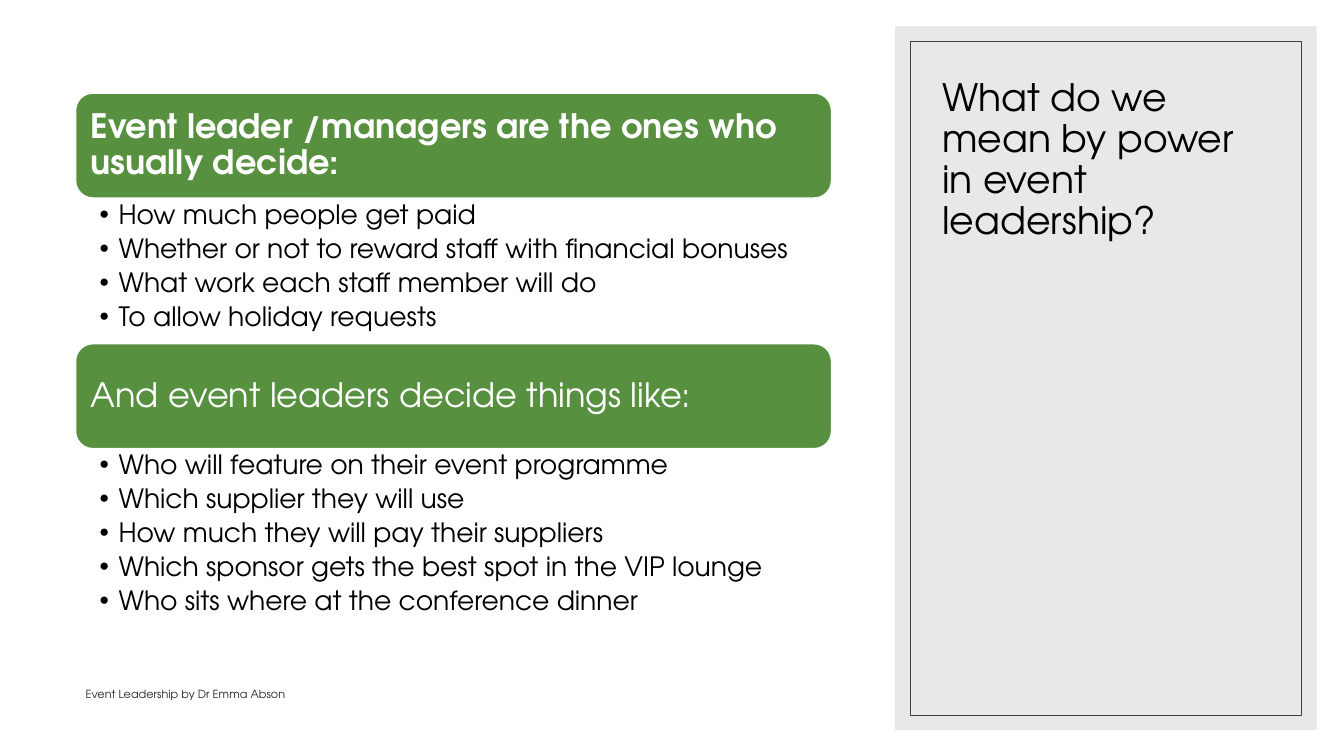
from pptx import Presentation
from pptx.dml.color import RGBColor
from pptx.enum.shapes import MSO_SHAPE as Shape
from pptx.enum.text import MSO_ANCHOR as Anchor, PP_ALIGN as Align
from pptx.oxml.ns import qn
from pptx.util import Pt
from lxml.etree import SubElement

FONT = "TeX Gyre Adventor"
COLOURS = {
    "panel": "D9D9D9",
    "frame": "404040",
    "green": "57903F",
    "white": "FFFFFF",
    "black": "000000",
    "footer": "262626",
}
BAR_HEIGHT = 75
LIST_INDENT = 13.5
SECTIONS = [
    (66.5, 104, True, "Event leader /managers are the ones who usually decide:", [
        "How much people get paid",
        "Whether or not to reward staff with financial bonuses",
        "What work each staff member will do",
        "To allow holiday requests",
    ]),
    (245.5, 129, False, "And event leaders decide things like:", [
        "Who will feature on their event programme",
        "Which supplier they will use",
        "How much they will pay their suppliers",
        "Which sponsor gets the best spot in the VIP lounge",
        "Who sits where at the conference dinner",
    ]),
]


def colour(name):
    return RGBColor.from_string(COLOURS[name])


def add_panel_shape(page, kind, box, fill=None, line=None, width=1):
    shape = page.shapes.add_shape(kind, *map(Pt, box))
    shape.shadow.inherit = False
    if fill:
        shape.fill.solid()
        shape.fill.fore_color.rgb = colour(fill)
    else:
        shape.fill.background()
    if line:
        shape.line.color.rgb = colour(line)
        shape.line.width = Pt(width)
    else:
        shape.line.fill.background()
    return shape


def write(shape, lines, size, ink, anchor, insets=(7.2, 3.6, 7.2, 3.6),
          spacing=0.9, after=0, bold=False, bullets=False):
    frame = shape.text_frame
    frame.word_wrap = True
    frame.vertical_anchor = anchor
    frame.margin_left, frame.margin_top, frame.margin_right, frame.margin_bottom = map(Pt, insets)
    frame.text = "\n".join(lines)
    for para in frame.paragraphs:
        para.alignment = Align.LEFT
        para.line_spacing = spacing
        para.space_after = Pt(after)
        if bullets:
            add_bullet(para)
        for run in para.runs:
            run.font.name = FONT
            run.font.size = Pt(size)
            run.font.bold = bold
            run.font.color.rgb = colour(ink)


def add_bullet(para):
    para.level = 1
    properties = para._p.get_or_add_pPr()
    properties.set("marL", str(Pt(LIST_INDENT)))
    properties.set("indent", str(-Pt(LIST_INDENT)))
    SubElement(properties, qn("a:buFont")).set("typeface", "Arial")
    SubElement(properties, qn("a:buChar")).set("char", "•")


def add_title_panel(page, left, top, width, height):
    panel = add_panel_shape(page, Shape.RECTANGLE, (left, top, width, height), "panel")
    tint = panel.fill._xPr.find(qn("a:solidFill"))[0]
    SubElement(tint, qn("a:alpha")).set("val", "60000")
    gap = 10.6
    frame_box = (left + gap, top + gap, width - 2 * gap, height - 2 * gap)
    add_panel_shape(page, Shape.RECTANGLE, frame_box, line="frame", width=0.5)
    title = page.shapes.add_textbox(Pt(left + 26.6), Pt(top + 28.6), Pt(249), Pt(129.6))
    write(title, ["What do we mean by power in event leadership?"], 27, "black", Anchor.BOTTOM)


def add_section(page, left, top, width, list_height, bold, heading, items):
    bar = add_panel_shape(page, Shape.ROUNDED_RECTANGLE, (left, top, width, BAR_HEIGHT),
                          "green", "white")
    write(bar, [heading], 24, "white", Anchor.MIDDLE, insets=(7.2,) * 4, bold=bold)
    item_box = page.shapes.add_textbox(Pt(left), Pt(top + BAR_HEIGHT), Pt(width), Pt(list_height))
    write(item_box, items, 19, "black", Anchor.TOP, insets=(17.2, 2.2, 13.6, 2.2),
          after=3.8, bullets=True)


def add_footer(page, left, top, width, height):
    footer = page.shapes.add_textbox(Pt(left), Pt(top), Pt(width), Pt(height))
    write(footer, ["Event Leadership by Dr Emma Abson"], 8, "footer", Anchor.BOTTOM,
          spacing=1.0, after=6)


def main():
    deck = Presentation()
    deck.slide_width, deck.slide_height = Pt(960), Pt(540)
    page = deck.slides.add_slide(deck.slide_layouts[6])
    add_title_panel(page, 639.4, 18.7, 301, 502.6)
    add_footer(page, 54, 475.2, 360.7, 28.8)
    for top, list_height, bold, heading, items in SECTIONS:
        add_section(page, 54, top, 540, list_height, bold, heading, items)
    deck.save("out.pptx")


if __name__ == "__main__":
    main()
